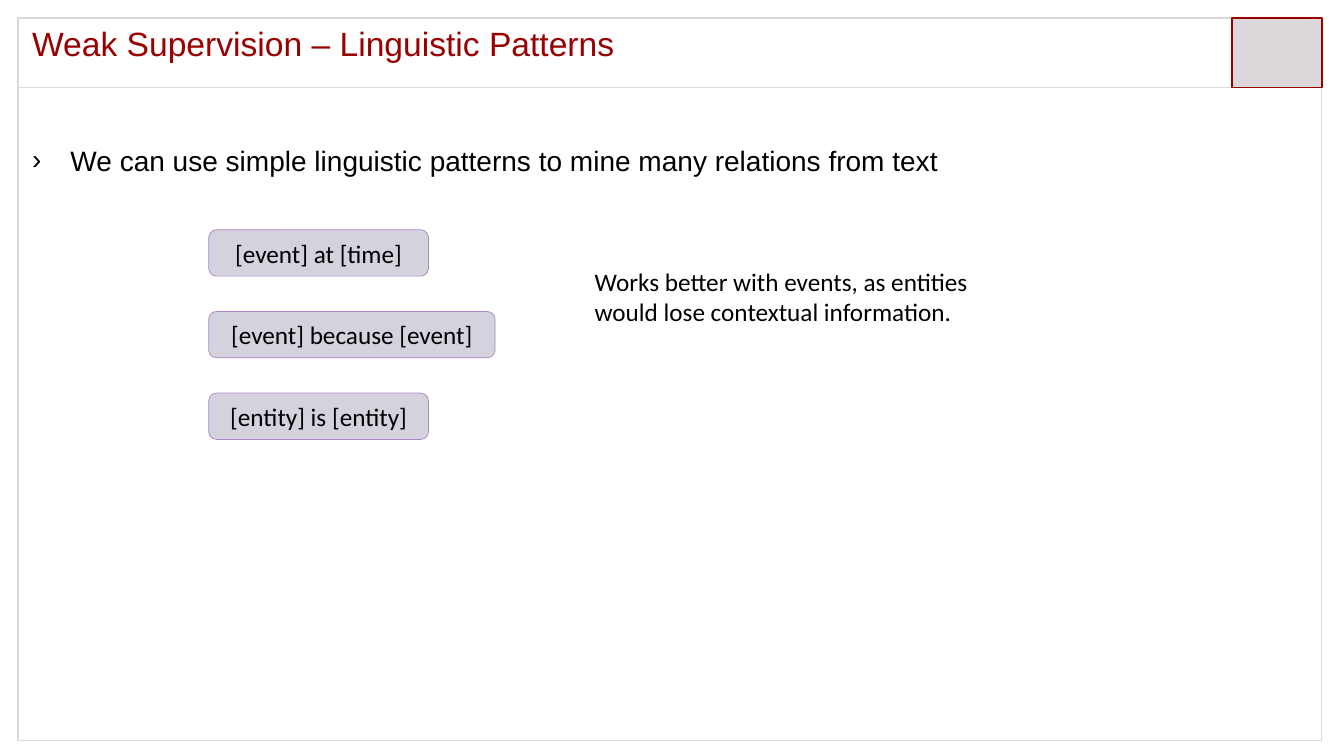
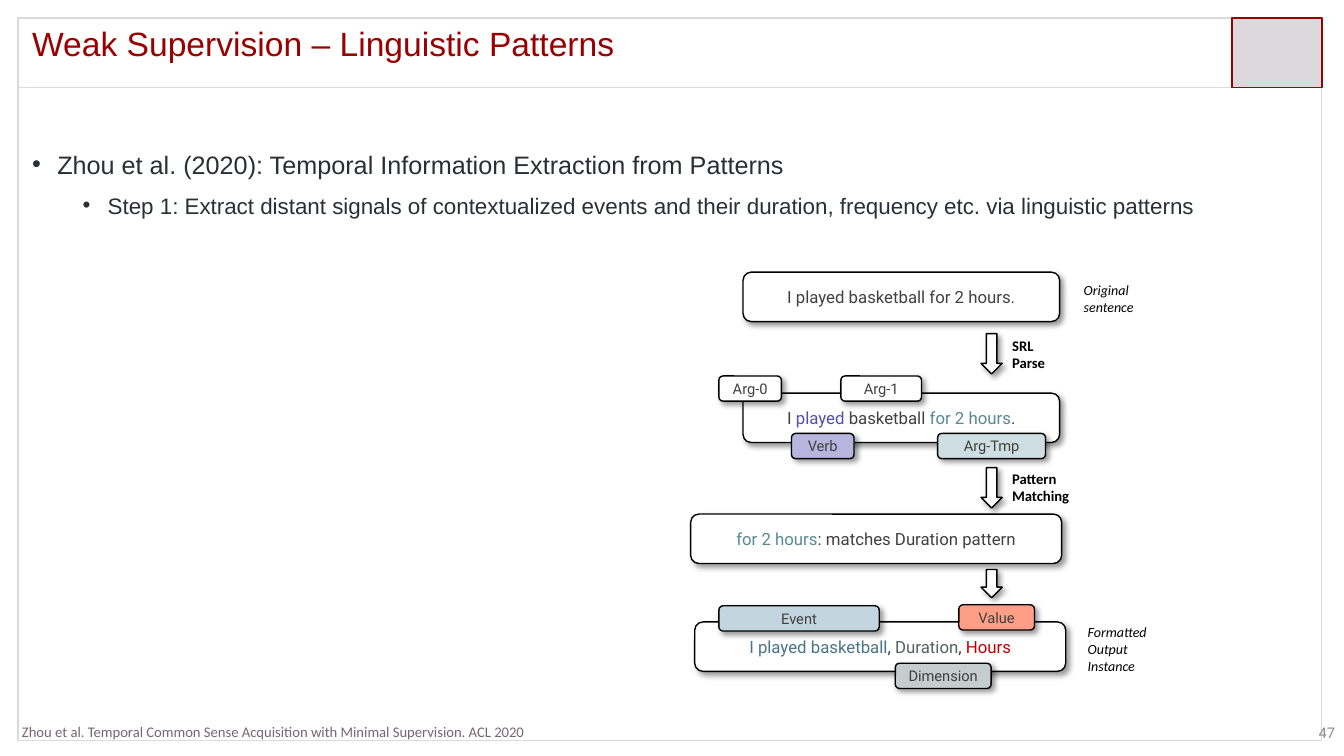
import lxml.etree
import pptx
import pptx.dml.color
import pptx.enum.shapes
import pptx.enum.text
import pptx.oxml.ns
import pptx.util

SCALE = 9144  # EMU in one px, 100 px to the inch
INK = {
    "white": "FFFFFF", "black": "000000", "rule": "DCD8DC", "brand": "990000",
    "body": "2A2F36", "grey": "404040", "page": "8C8C8C", "cite": "736773",
    "plum": "AD84C6", "mist": "D4D3DD", "verb": "524EAB", "time": "588894",
    "event": "497389", "dim": "536162", "value": "C00000",
    "lilac": "B7B5DD", "ice": "CEDEE2", "sky": "C3D5DF", "ash": "C5CDCE",
    "coral": "FF9E87",
}
LOOK = {
    "title": dict(name="Arial", size=24, color="brand"),
    "lead": dict(name="Arial", size=20, color="black"),
    "point": dict(name="Arial", size=18, color="body"),
    "step": dict(name="Arial", size=16, color="body"),
    "plain": dict(name="Calibri", size=18, color="black"),
    "side": dict(name="Calibri", size=10, color="black", italic=True),
    "stage": dict(name="Calibri", size=10.5, color="black", bold=True),
    "cite": dict(name="Calibri", size=10.5, color="cite"),
    "page": dict(name="Roboto", size=10.5, color="page"),
    "box": dict(name="Roboto", size=12, color="grey"),
    "tag": dict(name="Roboto", size=10.5, color="grey"),
}
KIND = pptx.enum.shapes.MSO_SHAPE
ALIGN = pptx.enum.text.PP_ALIGN
MIDDLE = pptx.enum.text.MSO_ANCHOR.MIDDLE
TITLE = "Weak Supervision – Linguistic Patterns"


def px(count):
    return pptx.util.Emu(count * SCALE)


def tint(color, name):
    color.rgb = pptx.dml.color.RGBColor.from_string(INK[name])


def node(parent, tag, **attrs):
    return lxml.etree.SubElement(parent, pptx.oxml.ns.qn(tag), attrs)


class Deck:
    def __init__(self):
        self.file = pptx.Presentation()
        self.file.slide_width, self.file.slide_height = px(1333), px(750)

    def start(self, title):
        """Add a slide with the shared frame, band and title."""
        self.slide = self.file.slides.add_slide(self.file.slide_layouts[6])
        self.shape(18, 18, 1293, 717, line="rule")
        self.shape(18, 18, 1293, 69, line="rule")
        self.shape(1222, 18, 89, 69, fill="rule", line="brand")
        self.text(22, 22, 1200, 57, title, "title", line_spacing=0.9)

    def put(self, para, text, look, **form):
        """Fill a paragraph from a string or from (text, colour) pairs."""
        for key, value in form.items():
            setattr(para, key, value)
        runs = [(text, None)] if isinstance(text, str) else text
        for words, color in runs:
            run = para.add_run()
            run.text = words
            for key, value in LOOK[look].items():
                if key == "color":
                    tint(run.font.color, color or value)
                else:
                    setattr(run.font, key, pptx.util.Pt(value) if key == "size" else value)

    def frame(self, left, top, wide, high):
        box = self.slide.shapes.add_textbox(px(left), px(top), px(wide), px(high))
        box.text_frame.word_wrap = True
        return box.text_frame

    def text(self, left, top, wide, high, text, look, anchor=None, **form):
        frame = self.frame(left, top, wide, high)
        frame.vertical_anchor = anchor
        self.put(frame.paragraphs[0], text, look, **form)

    def points(self, rows):
        """Set rows of (text, look, mark, indent, hang, form) as bullets."""
        frame = self.frame(22, 137, 1178, 490)
        for spot, (text, look, mark, indent, hang, form) in enumerate(rows):
            para = frame.add_paragraph() if spot else frame.paragraphs[0]
            self.put(para, text, look, **form)
            props = para._p.get_or_add_pPr()
            props.set("marL", str(px(indent)))
            props.set("indent", str(px(-hang)))
            node(props, "a:buFont", typeface="Arial")
            node(props, "a:buChar", char=mark)

    def shape(self, left, top, wide, high, kind=KIND.RECTANGLE, fill=None,
              line="black", width=1, shade=False):
        shape = self.slide.shapes.add_shape(kind, px(left), px(top), px(wide), px(high))
        if fill:
            shape.fill.solid()
            tint(shape.fill.fore_color, fill)
        else:
            shape.fill.background()
        tint(shape.line.color, line)
        shape.line.width = pptx.util.Pt(width)
        shape.shadow.inherit = False
        if shade:
            effect = shape._element.spPr.find(pptx.oxml.ns.qn("a:effectLst"))
            cast = node(effect, "a:outerShdw", blurRad="50800", dist="38100",
                        dir="2700000", algn="tl", rotWithShape="0")
            color = node(cast, "a:srgbClr", val=INK["black"])
            node(color, "a:alpha", val="40000")
        return shape

    def box(self, left, top, wide, high, text, look, fill="white", **form):
        """Draw a rounded box with centred text."""
        shape = self.shape(left, top, wide, high, KIND.ROUNDED_RECTANGLE, fill, **form)
        frame = shape.text_frame
        sides = ("left", "top", "right", "bottom")
        values = {"margin_" + side: 0 for side in sides}
        values.update(word_wrap=True, vertical_anchor=MIDDLE)
        for key, value in values.items():
            setattr(frame, key, value)
        self.put(frame.paragraphs[0], text, look, alignment=ALIGN.CENTER)

    def arrow(self, top, high):
        self.shape(973, top, 21, high, KIND.DOWN_ARROW, "white", shade=True)


def rules(deck):
    deck.start(TITLE)
    deck.points([("We can use simple linguistic patterns to mine many relations from text",
                  "lead", "›", 38, 38, {})])
    rows = [("[event] at [time]", 218), ("[event] because [event]", 284),
            ("[entity] is [entity]", 218)]
    for spot, (text, wide) in enumerate(rows):
        deck.box(207, 228 + 81 * spot, wide, 46, text, "plain", "mist",
                 line="plum", width=0.5)
    deck.text(580, 259, 454, 71,
              "Works better with events, as entities would lose contextual information.",
              "plain")


def steps(deck):
    deck.start(TITLE)
    deck.points([
        ("Zhou et al. (2020): Temporal Information Extraction from Patterns",
         "point", "•", 25, 25, dict(line_spacing=1.2)),
        ("Step 1: Extract distant signals of contextualized events and their duration, "
         "frequency etc. via linguistic patterns", "step", "•", 75, 25,
         dict(level=1, line_spacing=1.2, space_before=pptx.util.Pt(5))),
    ])
    boxes = [
        (737, 270, 314, "I played basketball for 2 hours."),
        (737, 390, 314, [("I ", None), ("played", "verb"), (" basketball ", None),
                         ("for 2 hours", "time"), (".", None)]),
        (685, 510, 368, [("for 2 hours", "time"), (": matches Duration pattern", None)]),
        (689, 617, 368, [("I played basketball", "event"), (", ", None),
                         ("Duration", "dim"), (", ", None), ("Hours", "value")]),
    ]
    for left, top, wide, text in boxes:
        deck.box(left, top, wide, 49, text, "box", shade=True)
    tags = [
        (785, 430, 62, "Verb", "lilac"), (713, 373, 62, "Arg-0", "white"),
        (834, 373, 80, "Arg-1", "white"), (930, 430, 107, "Arg-Tmp", "ice"),
        (713, 601, 159, "Event", "sky"), (888, 658, 95, "Dimension", "ash"),
        (951, 600, 75, "Value", "coral"),
    ]
    for left, top, wide, text, fill in tags:
        deck.box(left, top, wide, 25, text, "tag", fill, shade=True)
    for top, high in [(331, 40), (464, 40), (565, 28)]:
        deck.arrow(top, high)
    notes = [
        (1065, 274, 71, 39, "Original sentence", "side"),
        (994, 329, 71, 45, "SRL Parse", "stage"),
        (994, 461, 95, 45, "Pattern Matching", "stage"),
        (1069, 614, 83, 55, "Formatted Output Instance", "side"),
        (12, 712, 927, 28, "Zhou et al. Temporal Common Sense Acquisition with "
         "Minimal Supervision. ACL 2020", "cite"),
    ]
    for note in notes:
        deck.text(*note)
    deck.text(1278, 714, 56, 25, "47", "page", MIDDLE, alignment=ALIGN.RIGHT)


def main():
    deck = Deck()
    rules(deck)
    steps(deck)
    deck.file.save("out.pptx")


if __name__ == "__main__":
    main()
